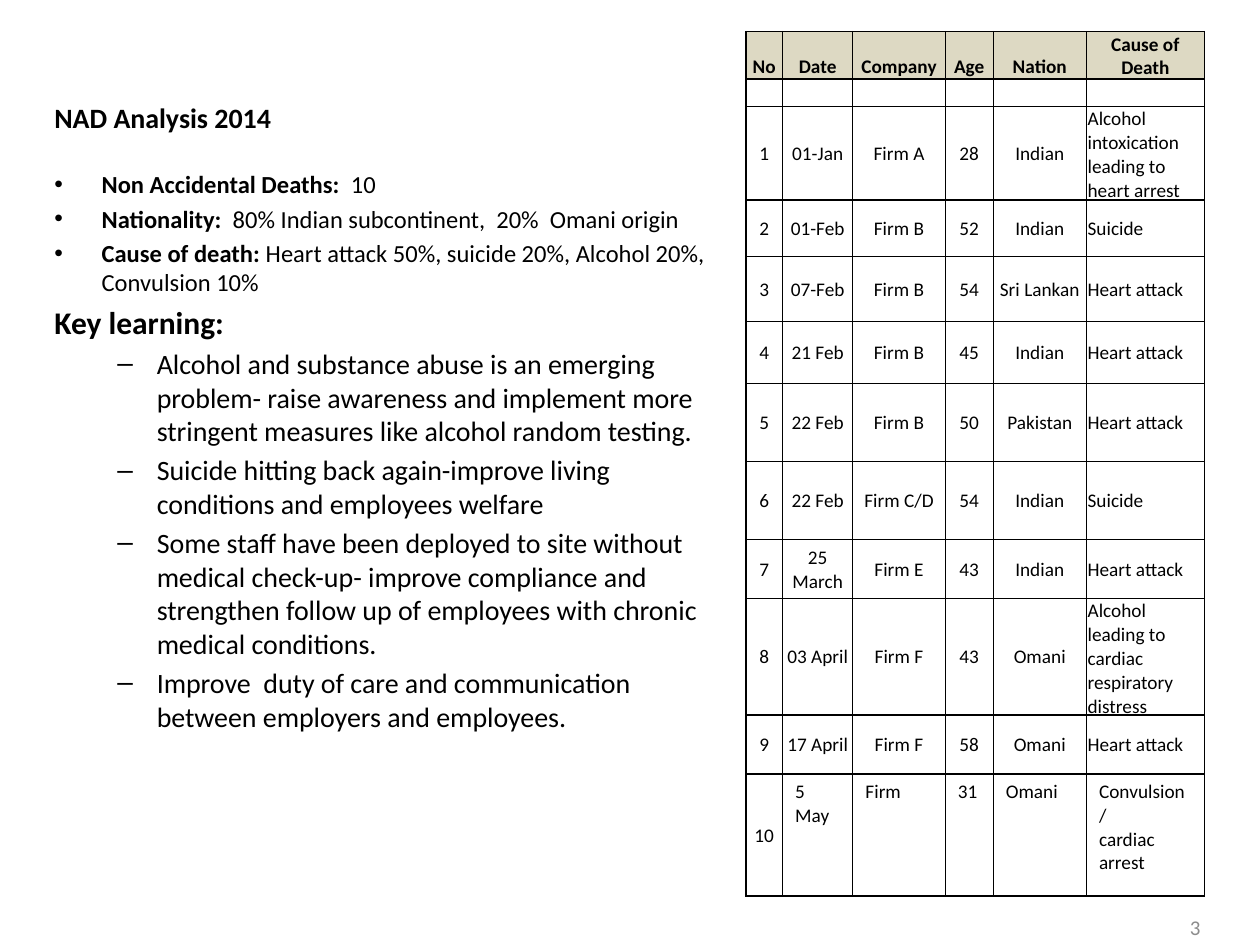
"""Build the slide on non accidental deaths in 2014 with its case table."""
from dataclasses import dataclass

import lxml.etree
import pptx
import pptx.dml.color
import pptx.enum.text
import pptx.oxml.ns
import pptx.util

Pt = pptx.util.Pt
Align = pptx.enum.text.PP_ALIGN
Anchor = pptx.enum.text.MSO_ANCHOR

FONT = "Calibri"
BLACK = "000000"
GREY = "8C8C8C"
HEADER_FILL = "DDD9C3"


@dataclass
class Line:
    label: str
    detail: str = ""
    size: float = 14
    bullet: str = ""
    margin: float = 27
    indent: float = -27
    before: float = 2.8


def learning(detail: str) -> Line:
    return Line("", detail, 16, "–", 58.5, -22.5, 3.2)


LINES = [
    Line("NAD Analysis 2014", size=16, before=0),
    Line("Non Accidental Deaths:  ", "10", bullet="•", before=20),
    Line("Nationality:", "  80% Indian subcontinent,  20%  Omani origin", bullet="•"),
    Line("Cause of death:", " Heart attack 50%, suicide 20%, Alcohol 20%, Convulsion 10%",
         bullet="•"),
    Line("Key learning:", size=18, before=3.6),
    learning("Alcohol and substance abuse is an emerging problem- raise awareness and "
             "implement more stringent measures like alcohol random testing."),
    learning("Suicide hitting back again-improve living conditions and employees welfare"),
    learning("Some staff have been deployed to site without medical check-up- improve "
             "compliance and strengthen follow up of employees with chronic medical conditions."),
    learning("Improve  duty of care and communication between employers and employees."),
]

COLUMN_WIDTHS = [21, 40.2, 52.8, 27.4, 53.3, 67.4]
ROW_HEIGHTS = [25.2, 15.6, 50.4, 32.2, 37.4, 35.3, 44.6, 44.6, 33.6, 62.6, 33.6, 69.8]
ROWS = [
    ("No", "Date", "Company", "Age", "Nation", "Cause of Death"),
    ("",) * 6,
    ("1", "01-Jan", "Firm A", "28", "Indian", "Alcohol intoxication leading to heart arrest"),
    ("2", "01-Feb", "Firm B", "52", "Indian", "Suicide"),
    ("3", "07-Feb", "Firm B", "54", "Sri Lankan", "Heart attack"),
    ("4", "21 Feb", "Firm B", "45", "Indian", "Heart attack"),
    ("5", "22 Feb", "Firm B", "50", "Pakistan", "Heart attack"),
    ("6", "22 Feb", "Firm C/D", "54", "Indian", "Suicide"),
    ("7", "25 March", "Firm E", "43", "Indian", "Heart attack"),
    ("8", "03 April", "Firm F", "43", "Omani",
     "Alcohol leading to cardiac respiratory distress"),
    ("9", "17 April", "Firm F", "58", "Omani", "Heart attack"),
    ("10", "5 May", "Firm", "31", "Omani", "Convulsion/\ncardiac arrest"),
]


def color(value: str) -> pptx.dml.color.RGBColor:
    return pptx.dml.color.RGBColor.from_string(value)


def add_text(paragraph, text: str, *, size: float, bold: bool = False,
             fill: str = BLACK, align=Align.LEFT) -> None:
    paragraph.alignment = align
    run = paragraph.add_run()
    run.text = text
    run.font.name = FONT
    run.font.size = Pt(size)
    run.font.bold = bold
    run.font.color.rgb = color(fill)


def add_box(slide, left: float, top: float, width: float, height: float):
    frame = slide.shapes.add_textbox(Pt(left), Pt(top), Pt(width), Pt(height)).text_frame
    frame.word_wrap = True
    return frame


def add_line(paragraph, line: Line) -> None:
    properties = paragraph._p.get_or_add_pPr()
    properties.set("marL", str(Pt(line.margin)))
    properties.set("indent", str(Pt(line.indent)))
    if line.bullet:
        font = lxml.etree.SubElement(properties, pptx.oxml.ns.qn("a:buFont"))
        font.set("typeface", "Arial")
        bullet = lxml.etree.SubElement(properties, pptx.oxml.ns.qn("a:buChar"))
        bullet.set("char", line.bullet)
    paragraph.space_before = Pt(line.before)
    for text, bold in ((line.label, True), (line.detail, False)):
        if text:
            add_text(paragraph, text, size=line.size, bold=bold)


def set_borders(cell, widths: dict[str, float]) -> None:
    properties = cell._tc.get_or_add_tcPr()
    for side, width in widths.items():
        border = lxml.etree.SubElement(properties, pptx.oxml.ns.qn(f"a:ln{side}"))
        border.set("w", str(Pt(width)))
        fill = lxml.etree.SubElement(border, pptx.oxml.ns.qn("a:solidFill"))
        lxml.etree.SubElement(fill, pptx.oxml.ns.qn("a:srgbClr")).set("val", BLACK)


def fill_cell(cell, text: str, row: int, column: int) -> None:
    header = row == 0
    top_left = row == len(ROWS) - 1 and column > 0
    set_borders(cell, {"L": 0.5 if column else 1, "R": 0.5, "T": 1, "B": 1})
    if header:
        cell.fill.solid()
        cell.fill.fore_color.rgb = color(HEADER_FILL)
    else:
        cell.fill.background()
    if not top_left:
        cell.margin_left = cell.margin_right = cell.margin_top = Pt(0.7)
        cell.margin_bottom = 0
        cell.vertical_anchor = Anchor.BOTTOM if header else Anchor.MIDDLE
    centred = header or (not top_left and column < len(COLUMN_WIDTHS) - 1)
    frame = cell.text_frame
    if not text:
        frame.paragraphs[0]._p.get_or_add_endParaRPr().set("sz", "1100")
        return
    for index, part in enumerate(text.split("\n")):
        paragraph = frame.add_paragraph() if index else frame.paragraphs[0]
        add_text(paragraph, part, size=11, bold=header,
                 align=Align.CENTER if centred else Align.LEFT)


def add_case_table(slide) -> None:
    table = slide.shapes.add_table(
        len(ROWS), len(COLUMN_WIDTHS), Pt(426.2), Pt(18),
        Pt(sum(COLUMN_WIDTHS)), Pt(sum(ROW_HEIGHTS))).table
    table.first_row = table.horz_banding = False
    for column, width in zip(table.columns, COLUMN_WIDTHS):
        column.width = Pt(width)
    for row, (height, texts) in enumerate(zip(ROW_HEIGHTS, ROWS)):
        table.rows[row].height = Pt(height)
        for column, text in enumerate(texts):
            fill_cell(table.cell(row, column), text, row, column)


def main() -> None:
    presentation = pptx.Presentation()
    presentation.slide_width, presentation.slide_height = Pt(720), Pt(540)
    slide = presentation.slides.add_slide(presentation.slide_layouts[6])

    analysis = add_box(slide, 24, 54, 396, 407.5)
    for index, line in enumerate(LINES):
        add_line(analysis.add_paragraph() if index else analysis.paragraphs[0], line)

    page_number = add_box(slide, 646, 520, 74, 19.4)
    page_number.vertical_anchor = Anchor.MIDDLE
    add_text(page_number.paragraphs[0], "3", size=12, fill=GREY, align=Align.CENTER)

    add_case_table(slide)
    presentation.save("out.pptx")


if __name__ == "__main__":
    main()
